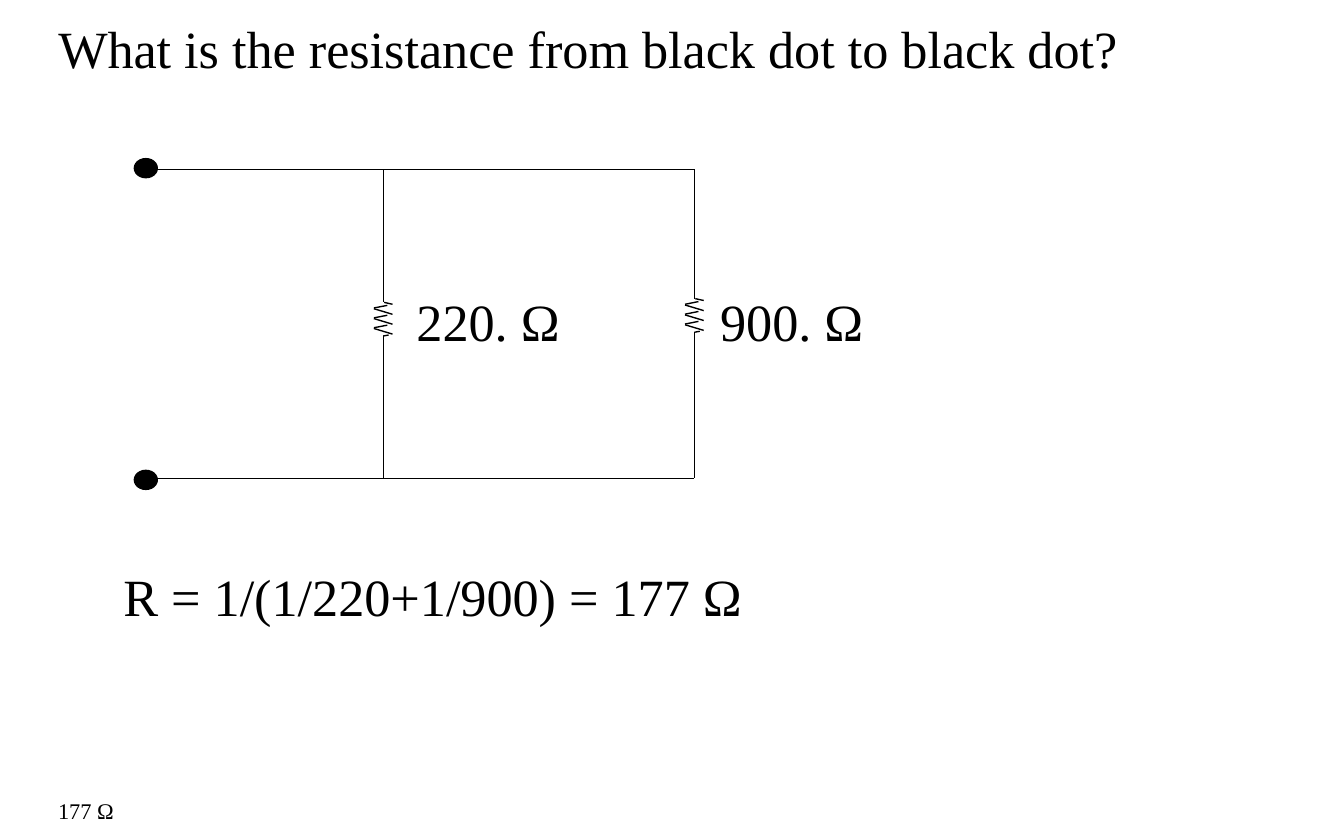
from dataclasses import dataclass

from lxml.etree import SubElement
from pptx import Presentation
from pptx.dml.color import RGBColor
from pptx.enum.shapes import MSO_CONNECTOR, MSO_SHAPE
from pptx.enum.text import MSO_ANCHOR, MSO_AUTO_SIZE, PP_ALIGN
from pptx.oxml.ns import qn
from pptx.util import Pt

BLACK = RGBColor(0, 0, 0)
WHITE = RGBColor(255, 255, 255)
FONT = "Times New Roman"
LINE_WIDTH = 0.75

TOP_WIRE = 90.7
BOTTOM_WIRE = 256.3
WIRE_START = 77.8
DOT_LEFT, DOT_WIDTH, DOT_HEIGHT = 72, 12.3, 10.2
DOT_TOPS = (85, 252)

LEAD_LENGTH = 10
ZIGZAG_COUNT = 3
ZIGZAG_PITCH = 5.3
ZIGZAG_REACH = 5
RESISTOR_HEIGHT = 38


@dataclass(frozen=True)
class Branch:
    wire: float
    resistor_top: float
    label: str
    label_left: float


BRANCHES = (
    Branch(205.3, 152, "220. Ω", 216),
    Branch(372, 150, "900. Ω", 378.7),
)


def write_text(box, text: str, *, left: float, top: float, width: float,
               height: float = 41, size: float = 28, wrap: bool = False) -> None:
    box.left, box.top = Pt(left), Pt(top)
    box.width, box.height = Pt(width), Pt(height)
    frame = box.text_frame
    frame.word_wrap = wrap
    frame.auto_size = MSO_AUTO_SIZE.SHAPE_TO_FIT_TEXT
    frame.vertical_anchor = MSO_ANCHOR.TOP
    para = frame.paragraphs[0]
    para.alignment = PP_ALIGN.LEFT
    span = para.add_run()
    span.text = text
    span.font.name = FONT
    span.font.size = Pt(size)
    span.font.color.rgb = BLACK


def add_text(page, text: str, **layout) -> None:
    write_text(page.shapes.add_textbox(0, 0, 0, 0), text, **layout)


def draw_line(shapes, x1: float, y1: float, x2: float, y2: float) -> None:
    line = shapes.add_connector(MSO_CONNECTOR.STRAIGHT, Pt(x1), Pt(y1), Pt(x2), Pt(y2))
    line.line.color.rgb = BLACK
    line.line.width = Pt(LINE_WIDTH)
    properties = line._element.find(qn("p:spPr"))
    SubElement(properties, qn("a:effectLst"))


def draw_resistor(page, x: float, top: float) -> None:
    shapes = page.shapes.add_group_shape().shapes
    bottom_lead = RESISTOR_HEIGHT - LEAD_LENGTH
    strokes = [
        (0, 0, 0, LEAD_LENGTH),
        (0.5, LEAD_LENGTH, ZIGZAG_REACH, LEAD_LENGTH + 1),
        (2.9, bottom_lead - 0.5, 0, bottom_lead),
        (0, bottom_lead, 0, RESISTOR_HEIGHT),
    ]
    for index in range(ZIGZAG_COUNT):
        start = LEAD_LENGTH + 1.6 + index * ZIGZAG_PITCH
        strokes += [
            (2.2, start, -ZIGZAG_REACH, start + 1.4),
            (-ZIGZAG_REACH, start + 1.8, ZIGZAG_REACH, start + 4.8),
        ]
    for x1, y1, x2, y2 in strokes:
        draw_line(shapes, x + x1, top + y1, x + x2, top + y2)


def draw_branch(page, branch: Branch) -> None:
    draw_line(page.shapes, branch.wire, TOP_WIRE, branch.wire, branch.resistor_top)
    draw_resistor(page, branch.wire, branch.resistor_top)
    draw_line(page.shapes, branch.wire, branch.resistor_top + RESISTOR_HEIGHT - 3,
              branch.wire, BOTTOM_WIRE)
    add_text(page, branch.label, left=branch.label_left, top=151.2, width=93)


def draw_dot(page, top: float) -> None:
    dot = page.shapes.add_shape(MSO_SHAPE.OVAL, Pt(DOT_LEFT), Pt(top),
                                Pt(DOT_WIDTH), Pt(DOT_HEIGHT))
    dot.shadow.inherit = False
    dot.fill.solid()
    dot.fill.fore_color.rgb = BLACK
    dot.line.color.rgb = BLACK
    dot.line.width = Pt(LINE_WIDTH)


def main() -> None:
    deck = Presentation()
    deck.slide_width, deck.slide_height = Pt(720), Pt(450)
    page = deck.slides.add_slide(deck.slide_layouts[5])
    page.background.fill.solid()
    page.background.fill.fore_color.rgb = WHITE

    write_text(page.shapes.title, "What is the resistance from black dot to black dot?",
               left=24, top=5, width=672, wrap=True)
    for wire in (TOP_WIRE, BOTTOM_WIRE):
        draw_line(page.shapes, WIRE_START, wire, BRANCHES[-1].wire, wire)
    for branch in BRANCHES:
        draw_branch(page, branch)
    for top in DOT_TOPS:
        draw_dot(page, top)
    add_text(page, "R = 1/(1/220+1/900) = 177 Ω", left=59, top=299, width=350)
    add_text(page, "177 Ω", left=24, top=423.4, width=48, height=21.6, size=12)

    deck.save("out.pptx")


if __name__ == "__main__":
    main()
